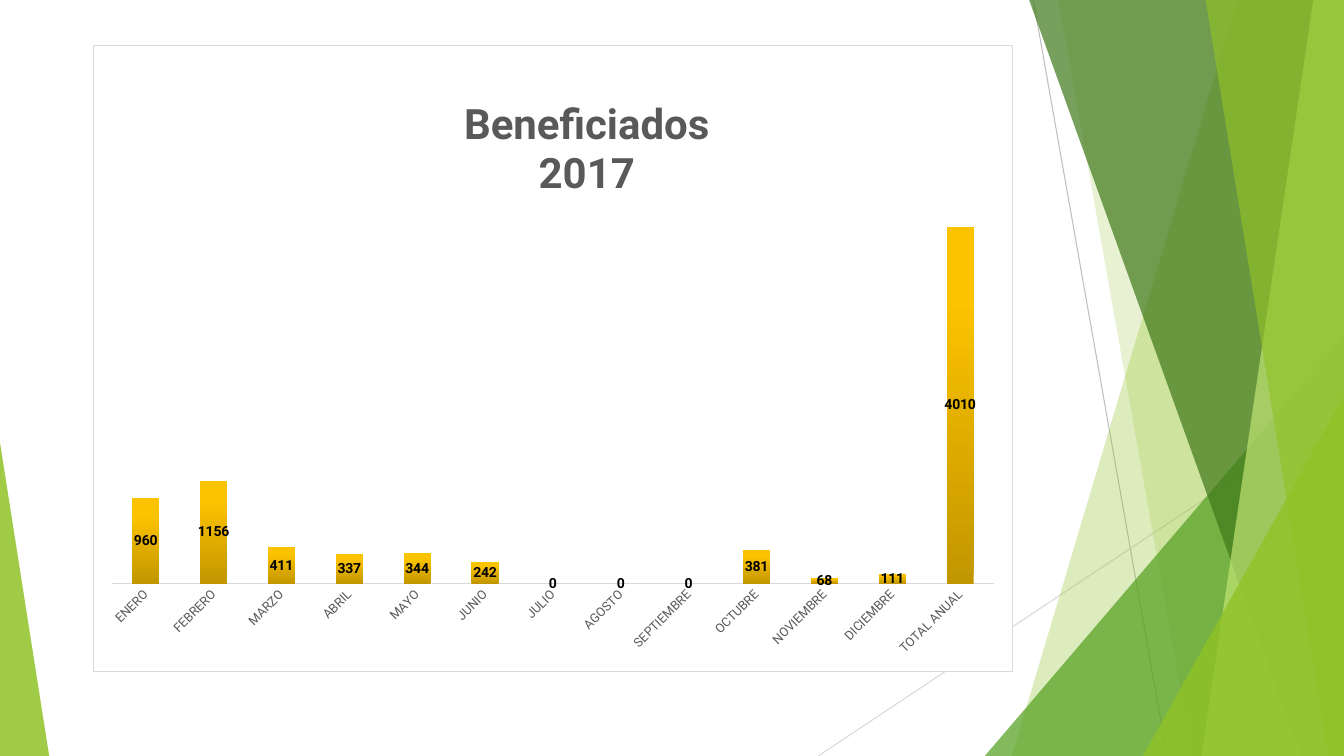
from pptx import Presentation
from pptx.chart.data import CategoryChartData
from pptx.dml.color import RGBColor
from pptx.enum.chart import XL_CHART_TYPE as CT, XL_LABEL_POSITION as LP, XL_TICK_MARK as TM
from pptx.enum.shapes import MSO_CONNECTOR as MC, MSO_SHAPE as MS
from pptx.oxml import parse_xml
from pptx.oxml.ns import nsdecls, qn
from pptx.oxml.xmlchemy import OxmlElement
from pptx.util import Cm, Pt

COLORS = {"lime": "90C226", "green": "54A021", "dark": "3F7819", "pale": "C0E474",
          "grey": "BFBFBF", "light": "D9D9D9", "text": "595959", "black": "000000",
          "white": "FFFFFF", "gold_dark": "C29600", "gold": "FCC300", "gold_light": "FDC400"}
FONT = "Roboto"
RIGHT, BOTTOM = 33.87, 19.05


def paint(sp, color, opacity):
    """Fill a shape with a translucent colour, without line or shadow."""
    sp.shadow.inherit = False
    sp.line.fill.background()
    sp.fill.solid()
    sp.fill.fore_color.rgb = RGBColor.from_string(COLORS[color])
    alpha = OxmlElement("a:alpha")
    alpha.set("val", str(opacity * 1000))
    sp.fill._xPr.find(".//" + qn("a:srgbClr")).append(alpha)


def place(element, index, target, **values):
    """Give a chart element a manual layout, as fractions of the chart."""
    for old in element.findall(qn("c:layout")):
        element.remove(old)
    inner = '<c:layoutTarget val="inner"/>' if target == "inner" else ""
    modes = '<c:xMode val="edge"/><c:yMode val="edge"/>'
    numbers = "".join(f'<c:{k} val="{v}"/>' for k, v in values.items())
    element.insert(index, parse_xml(
        f'<c:layout {nsdecls("c")}><c:manualLayout>{inner}{modes}{numbers}'
        '</c:manualLayout></c:layout>'))


prs = Presentation()
prs.slide_width, prs.slide_height = Cm(RIGHT), Cm(BOTTOM)
slide = prs.slides.add_slide(prs.slide_layouts[6])
shapes = slide.shapes

# Thin background lines
for x1, y1, x2, color in [(26.04, 0, 29.41, "grey"), (RIGHT, 10.24, 20.62, "light")]:
    line = shapes.add_connector(MC.STRAIGHT, Cm(x1), Cm(y1), Cm(x2), Cm(BOTTOM))
    line.line.color.rgb = RGBColor.from_string(COLORS[color])
    line.line.width = Pt(0.75)
    line._element.spPr.append(OxmlElement("a:effectLst"))

# Bands: x at the top and at the bottom; triangles: left, top, right, apex
facets = [
    ("band", (31.19, 25.5), "lime", 30),
    ("band", (26.67, 30.05), "lime", 20),
    ("triangle", (24.82, 8.46, RIGHT, 1), "green", 72),
    ("band", (25.93, 32.79), "dark", 70),
    ("band", (33.1, 30.28), "pale", 70),
    ("band", (30.38, 33.48), "lime", 65),
    ("triangle", (28.8, 9.98, RIGHT, 1), "lime", 80),
    ("triangle", (0, 11.15, 1.24, 0), "lime", 85),
]
for kind, place_at, color, opacity in facets:
    if kind == "band":
        top_x, bottom_x = place_at
        builder = shapes.build_freeform(Cm(top_x), Cm(-0.02))
        builder.add_line_segments([(Cm(RIGHT), Cm(-0.02)), (Cm(RIGHT), Cm(BOTTOM)),
                                   (Cm(bottom_x), Cm(BOTTOM))], close=True)
        sp = builder.convert_to_shape()
    else:
        left, top, right, apex = place_at
        sp = shapes.add_shape(MS.ISOSCELES_TRIANGLE, Cm(left), Cm(top),
                              Cm(right - left), Cm(BOTTOM - top))
        sp.adjustments[0] = apex
    paint(sp, color, opacity)

# Chart
data = CategoryChartData()
data.categories = ["ENERO", "FEBRERO", "MARZO", "ABRIL", "MAYO", "JUNIO", "JULIO", "AGOSTO",
                   "SEPTIEMBRE", "OCTUBRE", "NOVIEMBRE", "DICIEMBRE", "TOTAL ANUAL"]
data.add_series("Series 1", [960, 1156, 411, 337, 344, 242, 0, 0, 0, 381, 68, 111, 4010])
chart = shapes.add_chart(CT.COLUMN_STACKED, Cm(2.34), Cm(1.13), Cm(23.19), Cm(15.8), data).chart
chart.has_legend = False
chart.font.name, chart.font.size = FONT, Pt(10)
chart.font.color.rgb = RGBColor.from_string(COLORS["black"])
chart._chartSpace.find(qn("c:chart")).addnext(parse_xml(
    f'<c:spPr {nsdecls("c", "a")}>'
    f'<a:solidFill><a:srgbClr val="{COLORS["white"]}"/></a:solidFill>'
    f'<a:ln w="9525"><a:solidFill><a:srgbClr val="{COLORS["light"]}"/></a:solidFill></a:ln>'
    '</c:spPr>'))

chart.has_title = True
title = chart.chart_title
title.include_in_layout = False
tf = title.text_frame
tf.text = "Beneficiados\n2017"
for p in tf.paragraphs:
    p.font.name, p.font.size, p.font.bold = FONT, Pt(30), True
    p.font.color.rgb = RGBColor.from_string(COLORS["text"])
place(title._element, 1, "outer", x=0.4, y=0.08)
place(chart._chartSpace.find(".//" + qn("c:plotArea")), 0, "inner",
      x=0.02, y=0.22, w=0.96, h=0.64)

months = chart.category_axis
months.major_tick_mark = months.minor_tick_mark = TM.NONE
months.format.line.color.rgb = RGBColor.from_string(COLORS["light"])
months.format.line.width = Pt(1)
font = months.tick_labels.font
font.name, font.size = FONT, Pt(9)
font.color.rgb = RGBColor.from_string(COLORS["text"])
months._element.find(qn("c:txPr")).find(qn("a:bodyPr")).set("rot", "-2700000")

amounts = chart.value_axis
amounts.visible = False
amounts.has_major_gridlines = False
amounts.minimum_scale, amounts.maximum_scale = 0, 4500

plot = chart.plots[0]
plot.gap_width, plot.overlap, plot.vary_by_categories = 150, 100, False
series = plot.series[0]
fill = series.format.fill
fill.gradient()
fill.gradient_angle = 90
stops = fill._xPr.find(".//" + qn("a:gsLst"))
for old in list(stops):
    stops.remove(old)
for position, color in [(0, "gold_dark"), (80, "gold"), (100, "gold_light")]:
    stops.append(parse_xml(f'<a:gs {nsdecls("a")} pos="{position * 1000}">'
                           f'<a:srgbClr val="{COLORS[color]}"/></a:gs>'))

labels = series.data_labels
labels.show_value = True
labels.position = LP.CENTER
labels.font.name, labels.font.size, labels.font.bold = FONT, Pt(10), True
labels.font.color.rgb = RGBColor.from_string(COLORS["black"])

prs.save("out.pptx")
